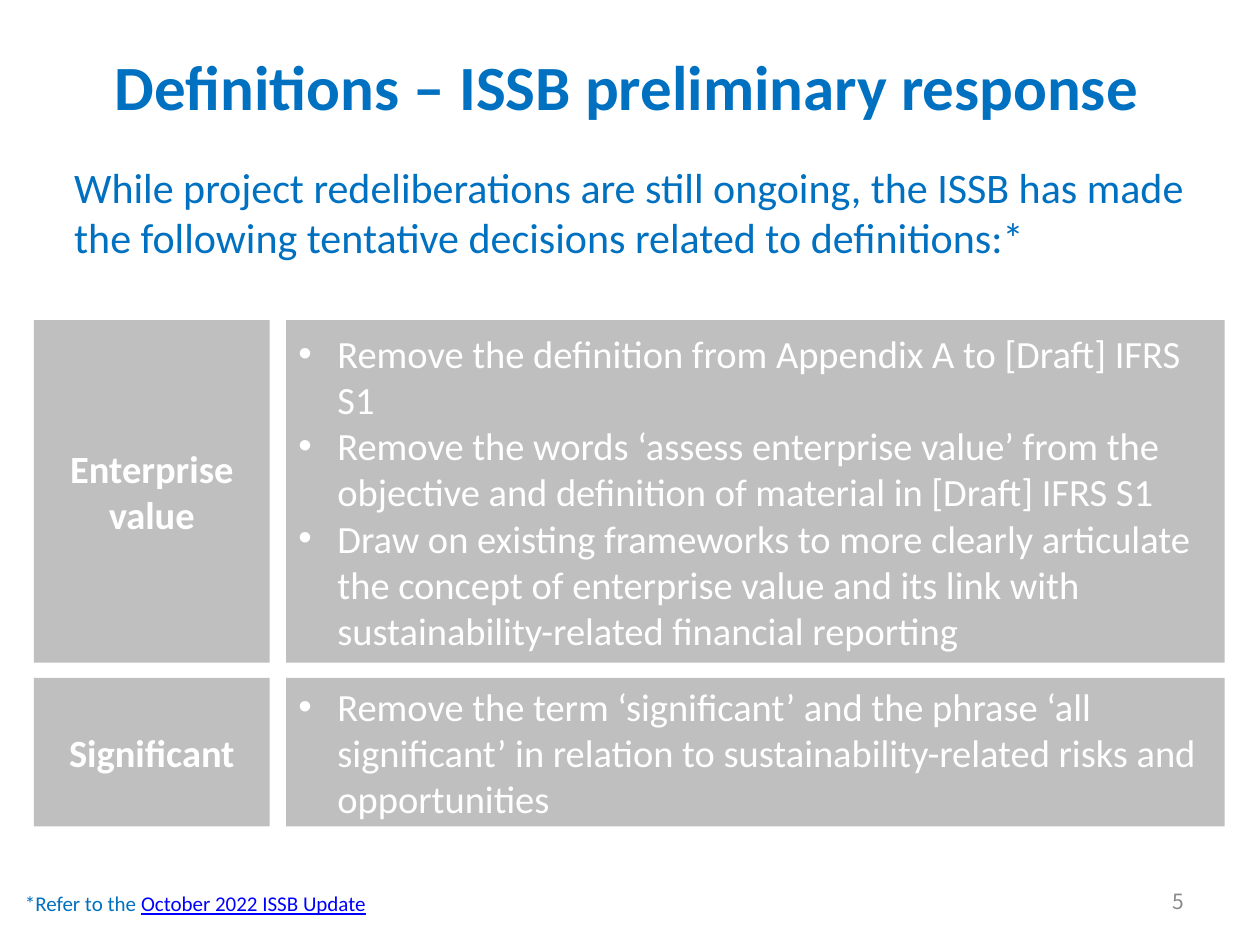
from dataclasses import dataclass

from lxml.etree import SubElement
from pptx import Presentation
from pptx.dml.color import RGBColor
from pptx.enum.shapes import MSO_SHAPE as Shape
from pptx.enum.text import MSO_ANCHOR as Anchor, MSO_AUTO_SIZE as AutoSize, PP_ALIGN as Align
from pptx.oxml.ns import qn
from pptx.util import Inches, Pt

BLUE, LINK, WHITE, GREY, MUTED = "0070C0", "0000FF", "FFFFFF", "BFBFBF", "898989"
COLUMNS = ((0.27, 1.87), (2.27, 7.45))  # left, width
ROWS = ((2.54, 2.72), (5.38, 1.18))  # top, height
BULLET_INDENT = Inches(0.31)


@dataclass
class Definition:
    term: str
    decisions: list[str]


DEFINITIONS = [
    Definition("Enterprise value", [
        "Remove the definition from Appendix A to [Draft] IFRS S1",
        "Remove the words ‘assess enterprise value’ from the objective and "
        "definition of material in [Draft] IFRS S1",
        "Draw on existing frameworks to more clearly articulate the concept of "
        "enterprise value and its link with sustainability-related financial reporting",
    ]),
    Definition("Significant", [
        "Remove the term ‘significant’ and the phrase ‘all significant’ in relation "
        "to sustainability-related risks and opportunities",
    ]),
]


def rgb(color: str) -> RGBColor:
    return RGBColor.from_string(color)


def add_run(paragraph, text: str, size: float, color: str, **font_values) -> None:
    run = paragraph.add_run()
    run.text = text
    run.font.color.rgb = rgb(color)
    for name, value in {"name": "Calibri", "size": Pt(size), **font_values}.items():
        setattr(run.font, name, value)


def prepare_frame(shape, **frame_values):
    """Set wrapping and frame options, and return the first paragraph."""
    frame = shape.text_frame
    for name, value in {"word_wrap": True, "auto_size": AutoSize.NONE, **frame_values}.items():
        setattr(frame, name, value)
    return frame.paragraphs[0]


def add_text_area(slide, left: float, top: float, width: float, height: float, **frame_values):
    area = slide.shapes.add_textbox(*map(Inches, (left, top, width, height)))
    return prepare_frame(area, **frame_values)


def add_bullet(paragraph) -> None:
    properties = paragraph._p.get_or_add_pPr()
    properties.set("marL", str(BULLET_INDENT))
    properties.set("indent", str(-BULLET_INDENT))
    SubElement(properties, qn("a:buFont"), typeface="Arial")
    SubElement(properties, qn("a:buChar"), char="•")


def add_cell(slide, column: tuple, row: tuple, lines: list[str], bulleted: bool) -> None:
    (left, width), (top, height) = column, row
    cell = slide.shapes.add_shape(Shape.RECTANGLE, *map(Inches, (left, top, width, height)))
    cell.shadow.inherit = False
    cell.fill.solid()
    cell.fill.fore_color.rgb = rgb(GREY)
    cell.line.fill.background()
    first = prepare_frame(cell, vertical_anchor=Anchor.MIDDLE)
    for index, line in enumerate(lines):
        paragraph = cell.text_frame.add_paragraph() if index else first
        paragraph.alignment = Align.LEFT if bulleted else Align.CENTER
        if bulleted:
            add_bullet(paragraph)
        add_run(paragraph, line, 22, WHITE, bold=not bulleted)


def add_title(slide, text: str) -> None:
    title = slide.shapes.title
    place = {"left": 0.1, "top": 0.33, "width": 9.75, "height": 0.7}
    for name, value in place.items():
        setattr(title, name, Inches(value))
    heading = prepare_frame(title, vertical_anchor=Anchor.MIDDLE)
    heading.alignment = Align.CENTER
    add_run(heading, text, 36, BLUE, bold=True)


def main() -> None:
    deck = Presentation()
    deck.slide_width, deck.slide_height = Inches(10), Inches(7.5)
    slide = deck.slides.add_slide(deck.slide_layouts.get_by_name("Title Only"))

    add_title(slide, "Definitions – ISSB preliminary response")

    intro = add_text_area(slide, 0.39, 1.23, 9.32, 6.04)
    intro.space_before, intro.space_after = Pt(12), Pt(6)
    intro._p.get_or_add_pPr().set("marL", str(Inches(0.1)))
    add_run(intro, "While project redeliberations are still ongoing, the ISSB has made "
            "the following tentative decisions related to definitions:*", 24, BLUE)

    page_number = add_text_area(slide, 7.17, 6.95, 2.33, 0.4, vertical_anchor=Anchor.MIDDLE)
    page_number.alignment = Align.RIGHT
    add_run(page_number, "5", 12, MUTED, name="Noto Sans CJK JP")

    term_column, decision_column = COLUMNS
    for row, definition in zip(ROWS, DEFINITIONS):
        add_cell(slide, term_column, row, [definition.term], bulleted=False)
        add_cell(slide, decision_column, row, definition.decisions, bulleted=True)

    footnote = add_text_area(slide, 0.1, 7.02, 8.77, 0.5)
    add_run(footnote, "*Refer to the ", 12, BLUE)
    add_run(footnote, "October 2022 ISSB Update", 12, LINK, underline=True)

    deck.save("out.pptx")


if __name__ == "__main__":
    main()
